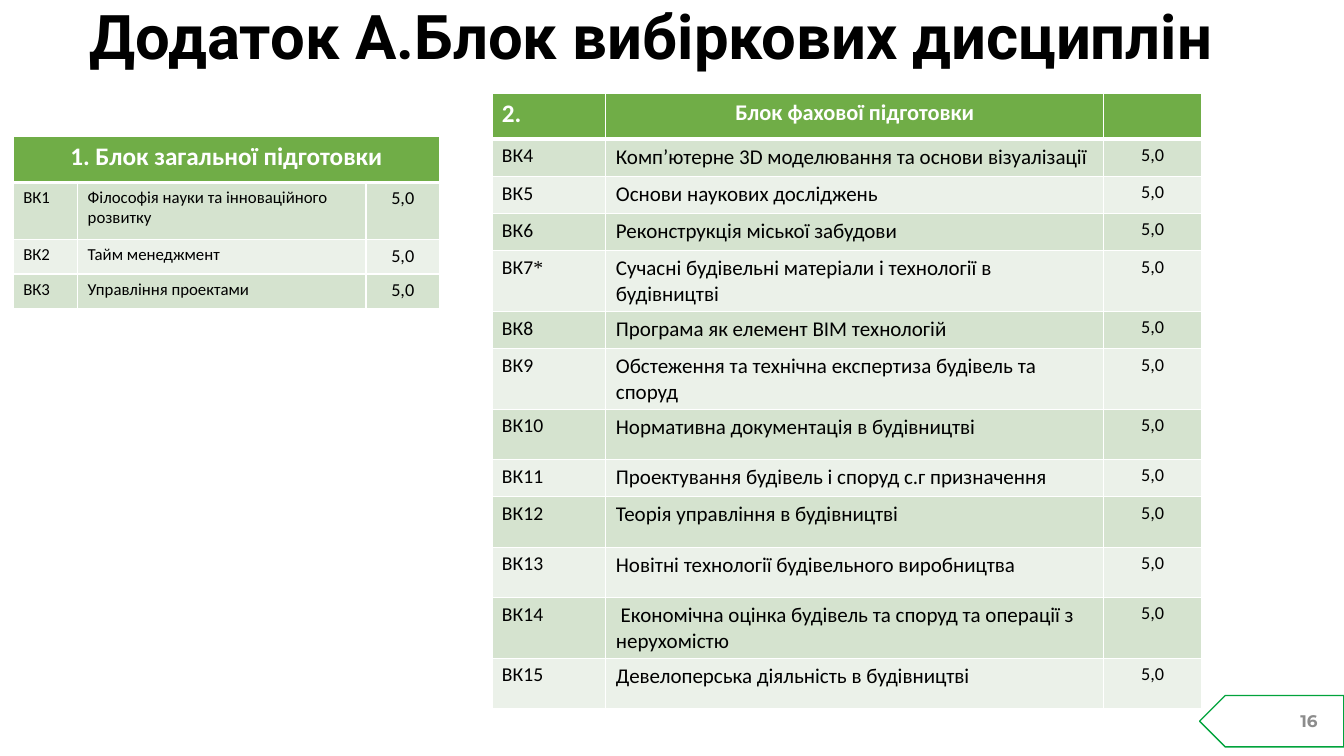
"""Build the slide listing the elective course blocks."""
from dataclasses import dataclass

from lxml import etree
from pptx import Presentation
from pptx import util as u
from pptx.dml.color import RGBColor
from pptx.enum import shapes, text
from pptx.oxml.ns import qn

WHITE = RGBColor(0xFF, 0xFF, 0xFF)
BLACK = RGBColor(0x00, 0x00, 0x00)
GREY = RGBColor(0x8C, 0x8C, 0x8C)
OUTLINE = RGBColor(0x01, 0xA3, 0x3C)
HEADER = RGBColor(0x70, 0xAD, 0x47)
BANDS = (RGBColor(0xD5, 0xE3, 0xCF), RGBColor(0xEB, 0xF1, 0xE9))

SLIDE_W, SLIDE_H = u.Inches(13.333), u.Inches(7.5)
CREDITS = "5,0"
LEFT, CENTER, RIGHT = text.PP_ALIGN.LEFT, text.PP_ALIGN.CENTER, text.PP_ALIGN.RIGHT


@dataclass(frozen=True)
class Label:
    content: str
    box: tuple[float, float, float, float]
    font: str
    size: float
    color: RGBColor
    align: text.PP_ALIGN
    spacing: float


@dataclass(frozen=True)
class Course:
    code: str
    name: str
    height: float


@dataclass(frozen=True)
class Block:
    left: float
    top: float
    cols: tuple[float, float, float]
    header: tuple[str, ...]
    header_sizes: tuple[float, ...]
    header_height: float
    sizes: tuple[float, float, float]
    courses: tuple[Course, ...]


LABELS = (
    Label("16", (76.28, 92.67, 22.5, 5.33), "Montserrat", 12, GREY, RIGHT, 1.0),
    Label("Додаток А.Блок вибіркових дисциплін", (5.93, -4.4, 86.25, 19.33),
          "Roboto", 44, BLACK, LEFT, 0.9),
)

BLOCKS = (
    Block(0.98, 18, (4.8, 21.45, 5.48), ("1. Блок загальної підготовки",), (18,),
          6.13, (12, 12, 13), (
              Course("ВК1", "Філософія науки та інноваційного розвитку", 7.6),
              Course("ВК2", "Тайм менеджмент", 4.53),
              Course("ВК3", "Управління проектами", 4.53),
          )),
    Block(36.6, 12.4, (8.48, 37.05, 7.27), ("2.", "Блок фахової підготовки", ""),
          (18, 16, 16), 6, (14, 15, 13), (
              Course("ВК4", "Комп’ютерне 3D моделювання та основи візуалізації", 4.93),
              Course("ВК5", "Основи наукових досліджень", 4.93),
              Course("ВК6", "Реконструкція міської забудови", 4.93),
              Course("ВК7*", "Сучасні будівельні матеріали і технології в будівництві", 4.93),
              Course("ВК8", "Програма як елемент ВІМ технологій", 4.93),
              Course("ВК9", "Обстеження та технічна експертиза будівель та споруд", 4.93),
              Course("ВК10", "Нормативна документація в будівництві", 6.67),
              Course("ВК11", "Проектування будівель і споруд с.г призначення", 4.93),
              Course("ВК12", "Теорія управління в будівництві", 6.67),
              Course("ВК13", "Новітні технології будівельного виробництва", 6.67),
              Course("ВК14", " Економічна оцінка будівель та споруд та операції з нерухомістю", 8),
              Course("ВК15", "Девелоперська діяльність в будівництві", 6.67),
          )),
)


def across(share: float) -> u.Emu:
    """Turn a percentage of the slide width into a length."""
    return u.Emu(round(SLIDE_W * share / 100))


def down(share: float) -> u.Emu:
    """Turn a percentage of the slide height into a length."""
    return u.Emu(round(SLIDE_H * share / 100))


def set_font(font, name: str, size: float, color: RGBColor, bold: bool) -> None:
    """Set the typeface, size, colour and weight of a font."""
    font.name, font.size, font.bold = name, u.Pt(size), bold
    font.color.rgb = color


def add_badge(s) -> None:
    """Draw the outlined arrow behind the slide number."""
    sp = s.shapes.add_shape(shapes.MSO_SHAPE.PENTAGON, across(89.25), down(92),
                            across(10.73), down(6.8))
    sp.rotation = 180
    sp.shadow.inherit = False
    sp.fill.solid()
    sp.fill.fore_color.rgb = WHITE
    sp.line.color.rgb = OUTLINE
    sp.line.width = u.Pt(1)


def add_label(s, label: Label) -> None:
    """Place one bold line of text."""
    x, y, w, h = label.box
    tf = s.shapes.add_textbox(across(x), down(y), across(w), down(h)).text_frame
    tf.word_wrap = True
    tf.vertical_anchor = text.MSO_ANCHOR.MIDDLE
    tf.text = label.content
    p = tf.paragraphs[0]
    p.alignment, p.line_spacing = label.align, label.spacing
    set_font(p.runs[0].font, label.font, label.size, label.color, True)


def set_borders(cell, top: float, bottom: float) -> None:
    """Give a cell white borders, with widths in points."""
    tc_pr = cell._tc.get_or_add_tcPr()
    for side, width in (("L", 1), ("R", 1), ("T", top), ("B", bottom)):
        ln = etree.SubElement(tc_pr, qn(f"a:ln{side}"), w=str(u.Pt(width)))
        fill = etree.SubElement(ln, qn("a:solidFill"))
        etree.SubElement(fill, qn("a:srgbClr"), val=str(WHITE))


def fill_cell(cell, content: str, size: float, align: text.PP_ALIGN,
              color: RGBColor, bold: bool) -> None:
    """Write a cell, setting a footnote star in its own typeface."""
    cell.text = content.rstrip("*")
    p = cell.text_frame.paragraphs[0]
    p.alignment = align
    set_font(p.font, "Calibri", size, color, bold)
    if content.endswith("*"):
        p.add_run().text = "*"
    for r in p.runs:
        name = "Times New Roman" if r.text == "*" else "Calibri"
        set_font(r.font, name, size, color, bold)


def add_block(s, block: Block) -> None:
    """Draw one course block as a table."""
    heights = (block.header_height, *(c.height for c in block.courses))
    table = s.shapes.add_table(len(heights), len(block.cols), across(block.left),
                               down(block.top), across(sum(block.cols)),
                               down(sum(heights))).table
    for column, width in zip(table.columns, block.cols):
        column.width = across(width)
    for i, (row, height) in enumerate(zip(table.rows, heights)):
        row.height = down(height)
        for cell in row.cells:
            set_borders(cell, 3 if i == 1 else 1, 3 if i == 0 else 1)
            cell.fill.solid()
            cell.fill.fore_color.rgb = BANDS[(i - 1) % 2] if i else HEADER
    if len(block.header) == 1:
        table.cell(0, 0).merge(table.cell(0, len(block.cols) - 1))
    for j, (content, size) in enumerate(zip(block.header, block.header_sizes)):
        align = LEFT if content == "2." else CENTER
        fill_cell(table.cell(0, j), content, size, align, WHITE, True)
    for i, course in enumerate(block.courses, 1):
        values = (course.code, course.name, CREDITS)
        for j, (content, size) in enumerate(zip(values, block.sizes)):
            align = CENTER if content == CREDITS else LEFT
            fill_cell(table.cell(i, j), content, size, align, BLACK, False)


def main() -> None:
    """Assemble the slide and save it."""
    prs = Presentation()
    prs.slide_width, prs.slide_height = SLIDE_W, SLIDE_H
    s = prs.slides.add_slide(prs.slide_layouts[6])
    add_badge(s)
    for label in LABELS:
        add_label(s, label)
    for block in BLOCKS:
        add_block(s, block)
    prs.save("out.pptx")


if __name__ == "__main__":
    main()
